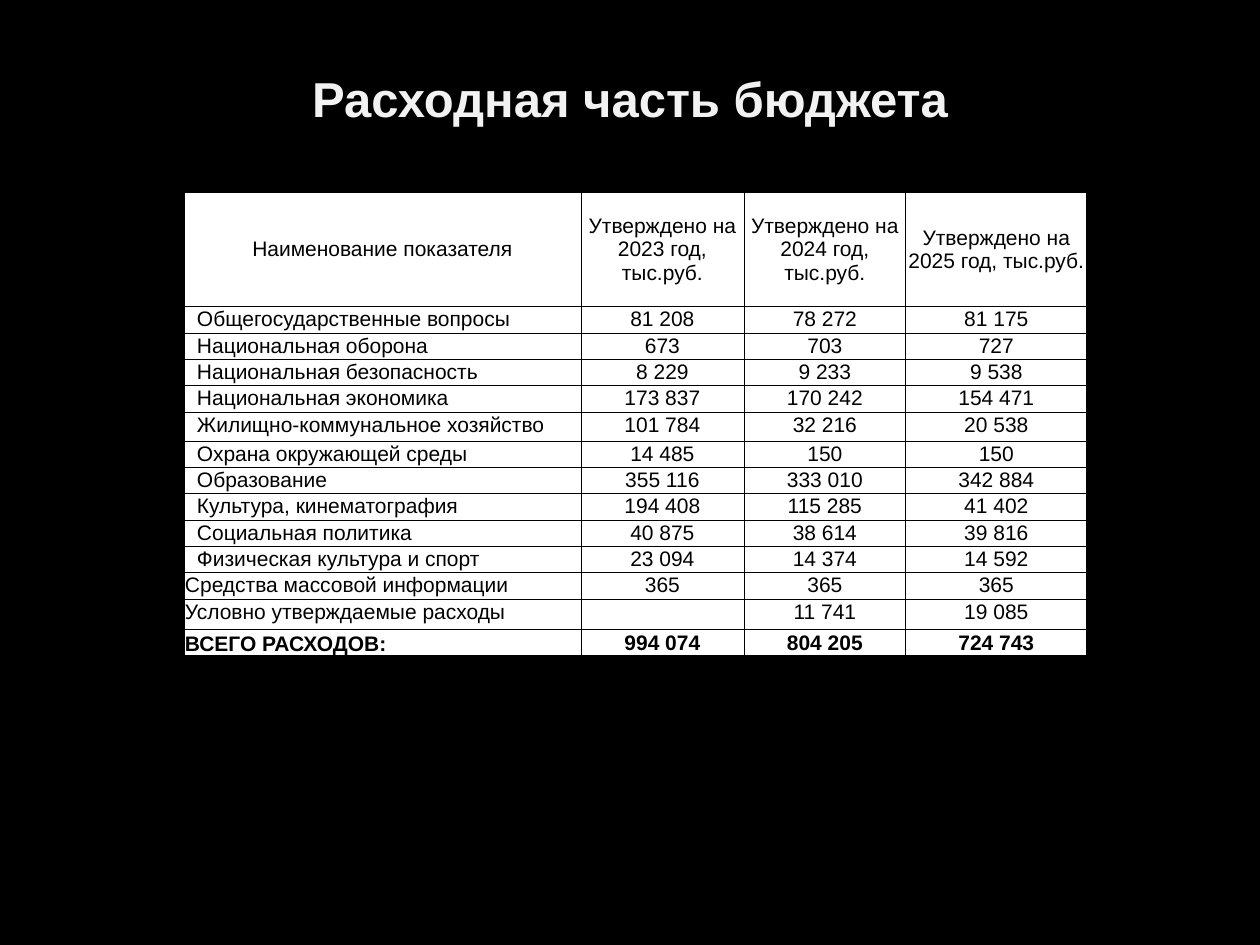
from dataclasses import dataclass

from lxml.etree import SubElement
from pptx import Presentation
from pptx.dml.color import RGBColor as RGB
from pptx.enum.text import MSO_ANCHOR as ANCHOR, PP_ALIGN as ALIGN
from pptx.oxml.ns import qn
from pptx.util import Pt

PX = 914400 // 126  # EMU in one px


@dataclass(frozen=True)
class Theme:
    font: str = "Arial"
    back: RGB = RGB(0, 0, 0)
    title: RGB = RGB(0xF2, 0xF2, 0xF2)
    ink: RGB = RGB(0, 0, 0)
    cell: RGB = RGB(0xFF, 0xFF, 0xFF)
    border: str = "000000"
    title_size: int = 28
    cell_size: int = 12
    border_width: float = 0.5


@dataclass(frozen=True)
class Row:
    """One table line: height and left indent in px."""
    name: str
    values: tuple[str, str, str]
    height: int = 26
    indent: int = 0
    bold: bool = False
    name_align: ALIGN = ALIGN.LEFT
    name_anchor: ANCHOR = ANCHOR.TOP
    value_anchor: ANCHOR = ANCHOR.TOP


THEME = Theme()
INDENT = 12
COLUMNS = (397, 163, 162, 181)
YEARS = (2023, 2024, 2025)
ROWS = (
    Row("Наименование показателя",
        tuple(f"Утверждено на {year} год, тыс.руб." for year in YEARS),
        114, name_align=ALIGN.CENTER, name_anchor=ANCHOR.MIDDLE,
        value_anchor=ANCHOR.MIDDLE),
    Row("Общегосударственные вопросы", ("81 208", "78 272", "81 175"), 27, INDENT),
    Row("Национальная оборона", ("673", "703", "727"), indent=INDENT),
    Row("Национальная безопасность", ("8 229", "9 233", "9 538"), indent=INDENT),
    Row("Национальная экономика", ("173 837", "170 242", "154 471"), 27, INDENT),
    Row("Жилищно-коммунальное хозяйство", ("101 784", "32 216", "20 538"), 30, INDENT),
    Row("Охрана окружающей среды", ("14 485", "150", "150"), indent=INDENT),
    Row("Образование", ("355 116", "333 010", "342 884"), indent=INDENT),
    Row("Культура, кинематография", ("194 408", "115 285", "41 402"), 27, INDENT),
    Row("Социальная политика", ("40 875", "38 614", "39 816"), indent=INDENT),
    Row("Физическая культура и спорт", ("23 094", "14 374", "14 592"), indent=INDENT),
    Row("Средства массовой информации", ("365", "365", "365"), 27),
    Row("Условно утверждаемые расходы", ("", "11 741", "19 085"), 30),
    Row("ВСЕГО РАСХОДОВ:", ("994 074", "804 205", "724 743"), bold=True,
        name_anchor=ANCHOR.BOTTOM, value_anchor=ANCHOR.MIDDLE),
)


def set_all(obj, values: dict) -> None:
    for name, value in values.items():
        setattr(obj, name, value)


def write(p, text: str, size: int, color: RGB, bold: bool, align: ALIGN) -> None:
    p.alignment = align
    if not text:  # an empty cell still needs its type size
        SubElement(p._p, qn("a:endParaRPr"), sz=str(size * 100))
        return
    r = p.add_run()
    r.text = text
    set_all(r.font, {"name": THEME.font, "size": Pt(size), "bold": bold})
    r.font.color.rgb = color


def add_borders(cell) -> None:
    tc_pr = cell._tc.get_or_add_tcPr()
    for side in ("lnL", "lnR", "lnT", "lnB"):
        ln = SubElement(tc_pr, qn(f"a:{side}"), w=str(Pt(THEME.border_width)))
        fill = SubElement(ln, qn("a:solidFill"))
        SubElement(fill, qn("a:srgbClr"), val=THEME.border)


def fill_cell(cell, text: str, row: Row, align: ALIGN, anchor: ANCHOR,
              indent: int = 0) -> None:
    add_borders(cell)
    cell.fill.solid()
    cell.fill.fore_color.rgb = THEME.cell
    set_all(cell, {"margin_left": PX, "margin_right": PX, "margin_top": PX,
                   "margin_bottom": 0, "vertical_anchor": anchor})
    p = cell.text_frame.paragraphs[0]
    write(p, text, THEME.cell_size, THEME.ink, row.bold, align)
    if indent:
        p._p.get_or_add_pPr().set("marL", str(indent * PX))


def add_title(s, text: str) -> None:
    sp = s.shapes.title
    set_all(sp, {"left": 63 * PX, "top": 37 * PX,
                 "width": 1134 * PX, "height": 121 * PX})
    tf = sp.text_frame
    set_all(tf, {"word_wrap": True, "vertical_anchor": ANCHOR.MIDDLE})
    write(tf.paragraphs[0], text, THEME.title_size, THEME.title, True, ALIGN.CENTER)


def add_budget_table(s, left: int, top: int) -> None:
    height = sum(row.height for row in ROWS)
    table = s.shapes.add_table(len(ROWS), len(COLUMNS), left * PX, top * PX,
                               sum(COLUMNS) * PX, height * PX).table
    set_all(table, {"first_row": False, "horz_banding": False})
    for column, width in zip(table.columns, COLUMNS):
        column.width = width * PX
    for i, row in enumerate(ROWS):
        table.rows[i].height = row.height * PX
        fill_cell(table.cell(i, 0), row.name, row, row.name_align,
                  row.name_anchor, row.indent)
        for j, value in enumerate(row.values, 1):
            fill_cell(table.cell(i, j), value, row, ALIGN.CENTER, row.value_anchor)


def main() -> None:
    prs = Presentation()
    set_all(prs, {"slide_width": 1260 * PX, "slide_height": 945 * PX})
    s = prs.slides.add_slide(prs.slide_layouts[5])

    # Background
    s.background.fill.solid()
    s.background.fill.fore_color.rgb = THEME.back

    # Title and expenditure table
    add_title(s, "Расходная часть бюджета")
    add_budget_table(s, 184, 192)
    prs.save("out.pptx")


if __name__ == "__main__":
    main()
